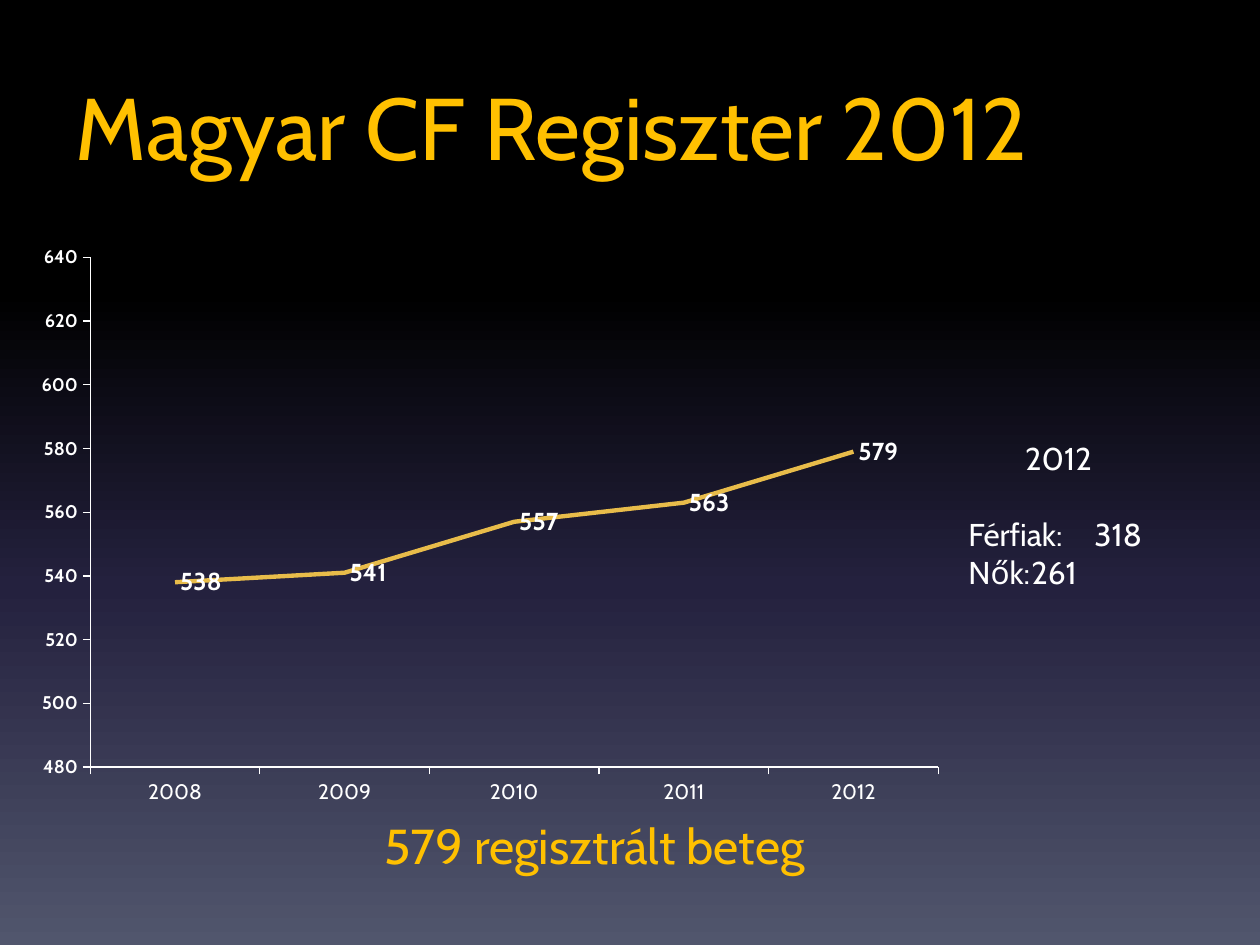
from copy import deepcopy
from dataclasses import dataclass

from lxml import etree
from pptx import Presentation
from pptx import util as u
from pptx.chart.data import CategoryChartData
from pptx.dml.color import RGBColor
from pptx.enum import chart as ch
from pptx.enum import text
from pptx.oxml.ns import qn

EMU_PER_PX = 914400 / 126
FONT = "Cabin"
GOLD = RGBColor(0xFF, 0xC0, 0x00)
LINE_GOLD = RGBColor(0xE8, 0xBC, 0x4A)
WHITE = RGBColor(0xFF, 0xFF, 0xFF)
BLACK = RGBColor(0x00, 0x00, 0x00)
NAVY = RGBColor(0x24, 0x21, 0x3E)
SLATE = RGBColor(0x51, 0x56, 0x6D)
BACKGROUND_STOPS = [(0, BLACK), (31, BLACK), (62, NAVY), (100, SLATE)]
PATIENTS_BY_YEAR = {"2008": 538, "2009": 541, "2010": 557, "2011": 563, "2012": 579}


@dataclass
class Box:
    left: int
    top: int
    width: int
    height: int

    def emu(self) -> list[u.Emu]:
        return [px(side) for side in (self.left, self.top, self.width, self.height)]


@dataclass
class Line:
    words: str
    align: text.PP_ALIGN = text.PP_ALIGN.LEFT
    space_before: int = 0


@dataclass
class Label:
    box: Box
    lines: list[Line]
    size: int
    color: RGBColor


TITLE = Label(Box(63, 63, 1134, 158), [Line("Magyar CF Regiszter 2012")], 50, GOLD)
CHART_BOX = Box(25, 234, 932, 586)
LABELS = [
    Label(Box(372, 809, 475, 72), [Line("579 regisztrált beteg")], 28, GOLD),
    Label(
        Box(956, 433, 205, 165),
        [
            Line("2012", text.PP_ALIGN.CENTER),
            Line("Férfiak:\t318", space_before=22),
            Line("Nők:\t261"),
        ],
        18,
        WHITE,
    ),
]


def px(length: int) -> u.Emu:
    return u.Emu(round(length * EMU_PER_PX))


def set_font(font, size: float, color: RGBColor, bold: bool = False) -> None:
    for name, value in {"name": FONT, "size": u.Pt(size), "bold": bold}.items():
        setattr(font, name, value)
    font.color.rgb = color


def paint_background(page) -> None:
    """Fill the page with a top-to-bottom gradient of all the stops."""
    fill = page.background.fill
    fill.gradient()
    fill.gradient_angle = 270
    stop_list = next(page.background._cSld.iter(qn("a:gsLst")))
    pattern = deepcopy(stop_list[0])
    for stop in list(stop_list):
        stop_list.remove(stop)
    for _ in BACKGROUND_STOPS:
        stop_list.append(deepcopy(pattern))
    for stop, (percent, color) in zip(fill.gradient_stops, BACKGROUND_STOPS):
        stop.position = percent / 100
        stop.color.rgb = color


def write_label(shape, label: Label) -> None:
    frame = shape.text_frame
    for index, line in enumerate(label.lines):
        para = frame.paragraphs[0] if index == 0 else frame.add_paragraph()
        para.alignment = line.align
        para.space_before = u.Pt(line.space_before)
        span = para.add_run()
        span.text = line.words
        set_font(span.font, label.size, label.color)


def add_title(page) -> None:
    title = page.shapes.title
    title.left, title.top, title.width, title.height = TITLE.box.emu()
    frame_format = {
        "vertical_anchor": text.MSO_ANCHOR.TOP,
        "auto_size": text.MSO_AUTO_SIZE.NONE,
        "margin_top": px(10),
    }
    for name, value in frame_format.items():
        setattr(title.text_frame, name, value)
    write_label(title, TITLE)


def add_label(page, label: Label) -> None:
    box = page.shapes.add_textbox(*label.box.emu())
    box.text_frame.word_wrap = False
    box.text_frame.auto_size = text.MSO_AUTO_SIZE.SHAPE_TO_FIT_TEXT
    write_label(box, label)


def format_axis(axis, size: float, bold: bool) -> None:
    axis_format = {
        "has_major_gridlines": False,
        "major_tick_mark": ch.XL_TICK_MARK.OUTSIDE,
        "minor_tick_mark": ch.XL_TICK_MARK.NONE,
    }
    for name, value in axis_format.items():
        setattr(axis, name, value)
    axis.format.line.color.rgb = WHITE
    axis.format.line.width = u.Pt(0.75)
    set_font(axis.tick_labels.font, size, WHITE, bold)


def fix_plot_area(chart) -> None:
    """Pin the inner plot area to fractions of the chart box."""
    plot_area = next(chart.element.iter(qn("c:plotArea")))
    for old in plot_area.findall(qn("c:layout")):
        plot_area.remove(old)
    layout = etree.Element(qn("c:layout"))
    manual = etree.SubElement(layout, qn("c:manualLayout"))
    settings = {
        "layoutTarget": "inner", "xMode": "edge", "yMode": "edge",
        "x": "0.07", "y": "0.04", "w": "0.91", "h": "0.87",
    }
    for name, value in settings.items():
        etree.SubElement(manual, qn(f"c:{name}")).set("val", value)
    plot_area.insert(0, layout)


def add_patient_chart(page) -> None:
    data = CategoryChartData()
    data.categories = list(PATIENTS_BY_YEAR)
    data.add_series("Series 1", list(PATIENTS_BY_YEAR.values()))
    chart = page.shapes.add_chart(ch.XL_CHART_TYPE.LINE, *CHART_BOX.emu(), data).chart
    chart.has_legend = False
    chart.has_title = False
    set_font(chart.font, 10, WHITE)
    fix_plot_area(chart)

    format_axis(chart.category_axis, 12, bold=False)
    format_axis(chart.value_axis, 10.5, bold=True)
    scale = {"minimum_scale": 480, "maximum_scale": 640, "major_unit": 20}
    for name, value in scale.items():
        setattr(chart.value_axis, name, value)

    chart.plots[0].vary_by_categories = False
    series = chart.plots[0].series[0]
    series.smooth = False
    series.marker.style = ch.XL_MARKER_STYLE.NONE
    series.format.line.color.rgb = LINE_GOLD
    series.format.line.width = u.Pt(2.5)
    series.data_labels.show_value = True
    series.data_labels.position = ch.XL_LABEL_POSITION.RIGHT
    set_font(series.data_labels.font, 14, WHITE, bold=True)


def main() -> None:
    deck = Presentation()
    deck.slide_width, deck.slide_height = px(1260), px(945)
    page = deck.slides.add_slide(deck.slide_layouts.get_by_name("Title Only"))
    paint_background(page)
    add_title(page)
    for label in LABELS:
        add_label(page, label)
    add_patient_chart(page)
    deck.save("out.pptx")


if __name__ == "__main__":
    main()
